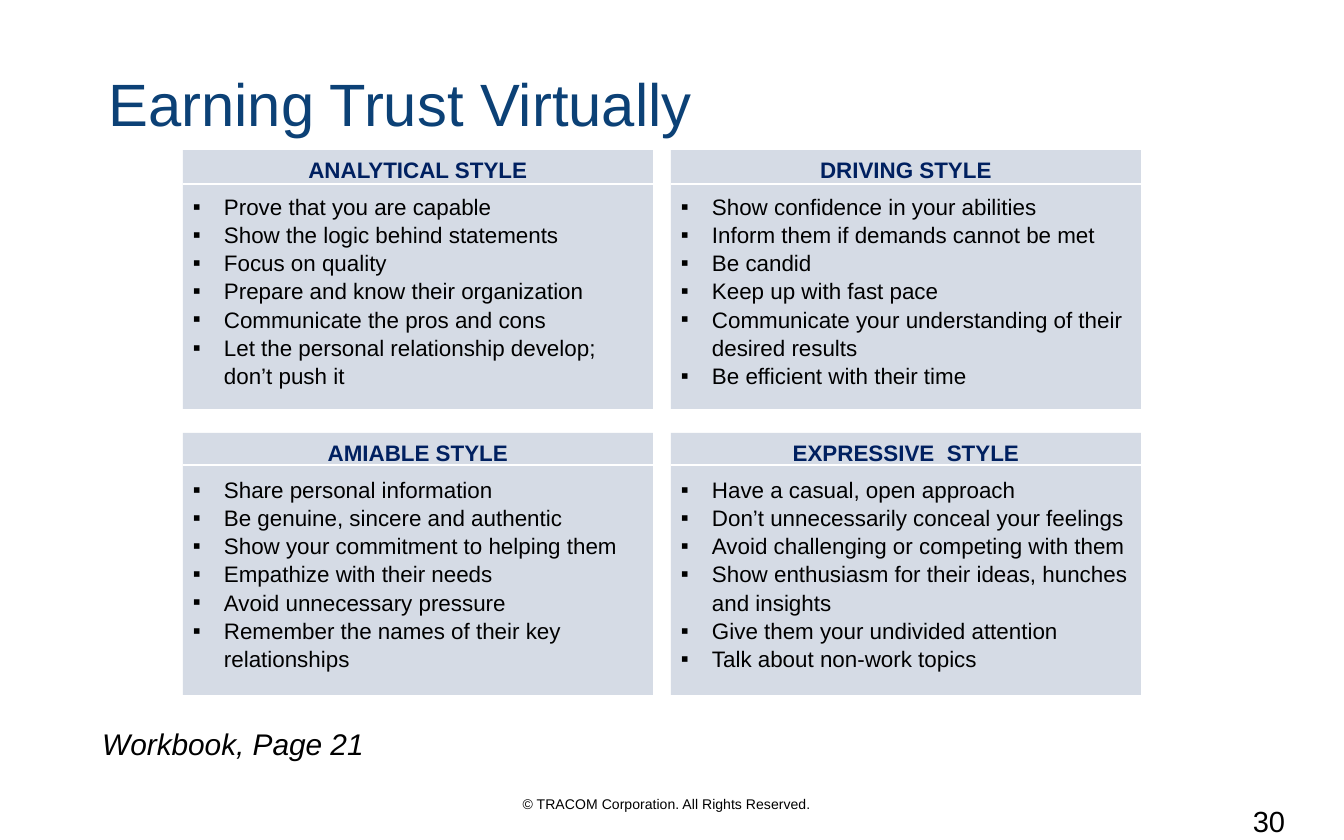
from lxml.etree import SubElement
from pptx import Presentation
from pptx.dml.color import RGBColor
from pptx.enum.shapes import MSO_CONNECTOR, MSO_SHAPE
from pptx.enum.text import MSO_ANCHOR as Anchor, PP_ALIGN as Align
from pptx.oxml.ns import qn
from pptx.util import Emu, Pt

EMU_PER_PX = 914400 / 134.4
FONT = "Arial"
COLORS = {
    "title": "0C4176",
    "panel": "D5DBE5",
    "heading": "002060",
    "text": "000000",
    "divider": "FFFFFF",
}

PANEL_LEFTS = (183, 671)
PANEL_WIDTH = 470
# top, height and divider position of each row of panels
PANEL_ROWS = ((150, 259, 184), (433, 262, 465))
BULLET_INDENT = 31

STYLES = (
    (
        ("ANALYTICAL STYLE", (
            "Prove that you are capable",
            "Show the logic behind statements",
            "Focus on quality",
            "Prepare and know their organization",
            "Communicate the pros and cons",
            "Let the personal relationship develop; don’t push it",
        )),
        ("DRIVING STYLE", (
            "Show confidence in your abilities",
            "Inform them if demands cannot be met",
            "Be candid",
            "Keep up with fast pace",
            "Communicate your understanding of their desired results",
            "Be efficient with their time",
        )),
    ),
    (
        ("AMIABLE STYLE", (
            "Share personal information",
            "Be genuine, sincere and authentic",
            "Show your commitment to helping them",
            "Empathize with their needs",
            "Avoid unnecessary pressure",
            "Remember the names of their key relationships",
        )),
        ("EXPRESSIVE  STYLE", (
            "Have a casual, open approach",
            "Don’t unnecessarily conceal your feelings",
            "Avoid challenging or competing with them",
            "Show enthusiasm for their ideas, hunches and insights",
            "Give them your undivided attention",
            "Talk about non-work topics",
        )),
    ),
)


def px(length):
    return Emu(round(length * EMU_PER_PX))


def color(name):
    return RGBColor.from_string(COLORS[name])


def set_font(para, size, color_name, bold=False, italic=False):
    font = para.font
    font.name, font.size = FONT, Pt(size)
    font.bold, font.italic = bold, italic
    font.color.rgb = color(color_name)


def add_bullet(para):
    properties = para._p.get_or_add_pPr()
    properties.set("marL", str(px(BULLET_INDENT)))
    properties.set("indent", str(-px(BULLET_INDENT)))
    SubElement(properties, qn("a:buFont"), typeface=FONT)
    SubElement(properties, qn("a:buChar"), char="▪")


def set_title(page, text):
    title = page.shapes.title
    title.left, title.top, title.width, title.height = map(px, (95, 55, 739, 105))
    frame = title.text_frame
    frame.text = text
    frame.vertical_anchor = Anchor.MIDDLE
    para = frame.paragraphs[0]
    para.alignment = Align.LEFT
    para.line_spacing = 0.9
    set_font(para, 32, "title")


def add_label(page, text, bounds, size, italic=False):
    box = page.shapes.add_textbox(*map(px, bounds))
    frame = box.text_frame
    frame.word_wrap = True
    para = frame.paragraphs[0]
    para.text = text
    para.alignment = Align.CENTER
    set_font(para, size, "text", italic=italic)


def add_divider(shapes, left, right, y):
    divider = shapes.add_connector(
        MSO_CONNECTOR.STRAIGHT, px(left), px(y), px(right), px(y))
    divider.line.color.rgb = color("divider")
    divider.line.width = Pt(1)
    SubElement(divider._element.spPr, qn("a:effectLst"))


def fill_panel(frame, heading, tips):
    frame.word_wrap = True
    frame.vertical_anchor = Anchor.TOP
    frame.margin_left = frame.margin_right = px(10)
    frame.margin_top = frame.margin_bottom = px(5)
    title = frame.paragraphs[0]
    title.text = heading
    title.alignment = Align.CENTER
    title.line_spacing = 1.05
    title.space_after = Pt(4.5)
    set_font(title, 12, "heading", bold=True)
    for tip in tips:
        para = frame.add_paragraph()
        para.text = tip
        para.alignment = Align.LEFT
        para.line_spacing = 1.05
        add_bullet(para)
        set_font(para, 12, "text")


def add_panel(page, left, row, heading, tips):
    top, height, divider_y = row
    shapes = page.shapes.add_group_shape().shapes
    panel = shapes.add_shape(
        MSO_SHAPE.RECTANGLE, px(left), px(top), px(PANEL_WIDTH), px(height))
    panel.shadow.inherit = False
    panel.fill.solid()
    panel.fill.fore_color.rgb = color("panel")
    panel.line.fill.background()
    fill_panel(panel.text_frame, heading, tips)
    add_divider(shapes, left, left + PANEL_WIDTH, divider_y)


def main():
    deck = Presentation()
    deck.slide_width, deck.slide_height = px(1344), px(840)
    page = deck.slides.add_slide(deck.slide_layouts.get_by_name("Title Only"))
    set_title(page, "Earning Trust Virtually")
    for row, styles in zip(PANEL_ROWS, STYLES):
        for left, (heading, tips) in zip(PANEL_LEFTS, styles):
            add_panel(page, left, row, heading, tips)
    add_label(page, "Workbook, Page 21", (82, 719, 302, 50), 16, italic=True)
    add_label(page, "© TRACOM Corporation. All Rights Reserved.",
              (438, 789, 457, 31), 7.5)
    add_label(page, "30", (1218, 797, 102, 44), 15.6)
    deck.save("out.pptx")


if __name__ == "__main__":
    main()
